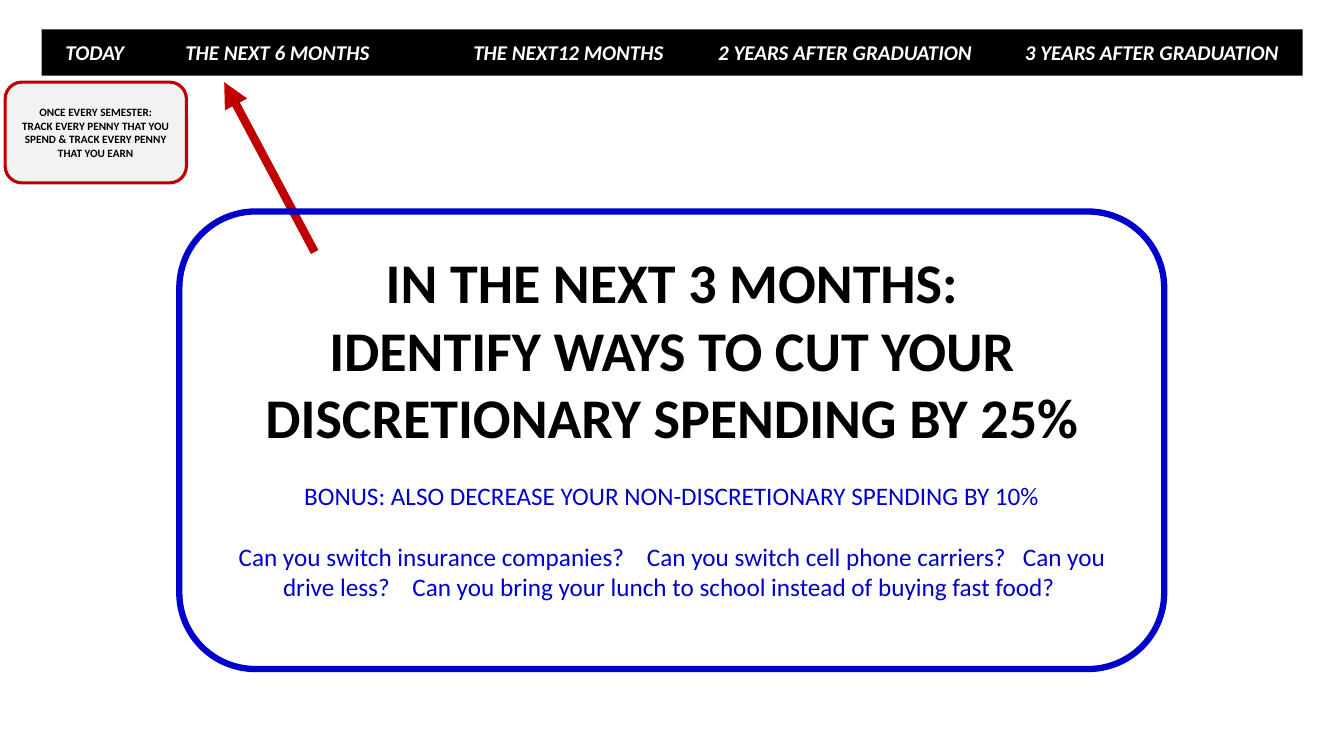
from pptx import Presentation
from pptx.dml.color import RGBColor
from pptx.enum.shapes import MSO_CONNECTOR, MSO_SHAPE
from pptx.enum.text import MSO_ANCHOR, PP_ALIGN
from pptx.oxml.ns import qn
from pptx.util import Cm, Pt
from lxml.etree import SubElement

COLORS = {"black": "000000", "white": "FFFFFF", "grey": "F2F2F2",
          "red": "C00000", "blue": "0000CC"}


class Board:
    """Holds the style and the current slide."""
    font = "Calibri"

    def __init__(self, slide):
        self.slide = slide

    def color(self, name):
        return RGBColor.from_string(COLORS[name])

    def box(self, kind, place, fill=None, line=None, width=0, **frame):
        shape = self.slide.shapes.add_shape(kind, *map(Cm, place))
        shape.shadow.inherit = False
        if fill:
            shape.fill.solid()
            shape.fill.fore_color.rgb = self.color(fill)
        else:
            shape.fill.background()
        if line:
            shape.line.color.rgb = self.color(line)
            shape.line.width = Pt(width)
        else:
            shape.line.fill.background()
        text = shape.text_frame
        frame = {"word_wrap": True, "vertical_anchor": MSO_ANCHOR.MIDDLE, **frame}
        for key, value in frame.items():
            setattr(text, key, value)
        return text

    def para(self, text, first=False, tabs=(), align=PP_ALIGN.CENTER, before=0):
        para = text.paragraphs[0] if first else text.add_paragraph()
        para.alignment = align
        if before:
            para.space_before = Pt(before)
        if tabs:
            stops = SubElement(para._p.get_or_add_pPr(), qn("a:tabLst"))
            for tab in tabs:
                SubElement(stops, qn("a:tab"), pos=str(Cm(tab)), algn="l")
        return para

    def run(self, para, words, color, gap=0, **style):
        run = para.add_run()
        run.text = words
        run.font.color.rgb = self.color(color)
        for key, value in {"name": self.font, **style}.items():
            setattr(run.font, key, value)
        if gap:
            run.font._element.set("spc", str(gap * 100))

    def arrow(self, start, end, color, width):
        line = self.slide.shapes.add_connector(
            MSO_CONNECTOR.STRAIGHT, *map(Cm, start + end))
        line.line.color.rgb = self.color(color)
        line.line.width = Pt(width)
        SubElement(line.line._get_or_add_ln(), qn("a:tailEnd"), type="triangle")
        SubElement(line._element.spPr, qn("a:effectLst"))


def main():
    deck = Presentation()
    deck.slide_width, deck.slide_height = Cm(33.87), Cm(19.05)
    board = Board(deck.slides.add_slide(deck.slide_layouts[6]))

    # Timeline bar, its stages set on tab stops
    stages = ["TODAY", "THE NEXT 6 MONTHS", "THE NEXT12 MONTHS",
              "2 YEARS AFTER GRADUATION", "3 YEARS AFTER GRADUATION"]
    bar = board.box(MSO_SHAPE.RECTANGLE, (1.05, 0.74, 31.78, 1.17), "black",
                    margin_left=Cm(0.6), margin_right=Cm(0))
    para = board.para(bar, True, (3.02, 10.28, 16.45, 24.18), PP_ALIGN.LEFT)
    board.run(para, "\t".join(stages), "white", size=Pt(15), bold=True, italic=True)

    # Semester task
    task = board.box(MSO_SHAPE.ROUNDED_RECTANGLE, (0.13, 2.07, 4.57, 2.54),
                     "grey", "red", 2.25)
    lines = ["ONCE EVERY SEMESTER:",
             "TRACK EVERY PENNY THAT YOU SPEND & TRACK EVERY PENNY THAT YOU EARN"]
    for index, words in enumerate(lines):
        board.run(board.para(task, index == 0), words, "black", size=Pt(8), bold=True)

    # Arrow from the goal to the timeline
    board.arrow((7.93, 6.35), (5.65, 2.07), "red", 6)

    # Goal for the next three months
    goal = board.box(MSO_SHAPE.ROUNDED_RECTANGLE, (4.52, 5.33, 24.82, 11.53),
                     line="blue", width=4.5, margin_bottom=Cm(0.9))
    lines = ["IN THE NEXT 3 MONTHS:",
             "IDENTIFY WAYS TO CUT YOUR DISCRETIONARY SPENDING BY 25%"]
    for index, words in enumerate(lines):
        board.run(board.para(goal, index == 0), words, "black", size=Pt(40), bold=True)

    # Bonus and its questions, each with the width of the gap after it
    small = {"size": Pt(18), "bold": False}
    board.run(board.para(goal, before=22),
              "BONUS: ALSO DECREASE YOUR NON-DISCRETIONARY SPENDING BY 10%",
              "blue", **small)
    asks = [("Can you switch insurance companies?", 12),
            ("Can you switch cell phone carriers?", 8),
            ("Can you drive less?", 12),
            ("Can you bring your lunch to school instead of buying fast food?", 12)]
    para = board.para(goal, before=22)
    for words, gap in asks:
        board.run(para, words, "blue", **small)
        board.run(para, " ", "blue", gap, **small)

    deck.save("out.pptx")


if __name__ == "__main__":
    main()
